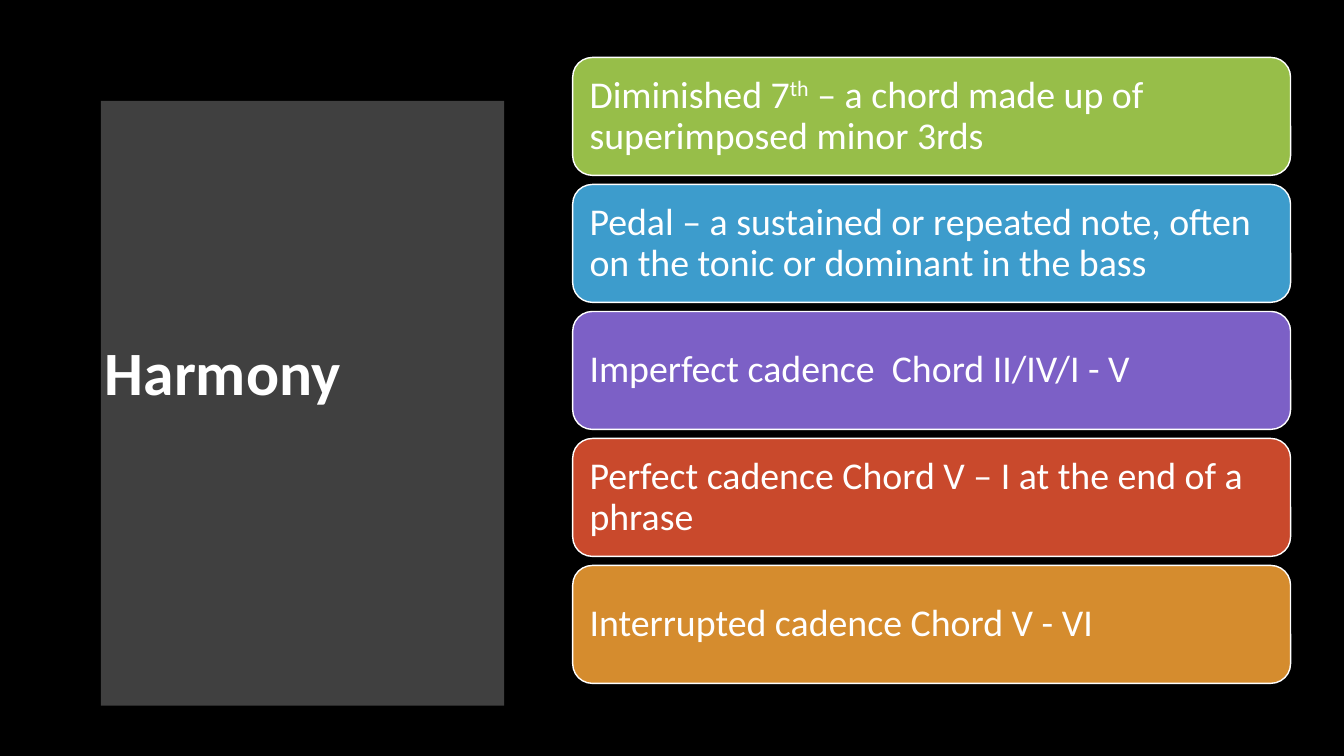
from pptx import Presentation
from pptx.dml.color import RGBColor
from pptx.enum.shapes import MSO_SHAPE
from pptx.enum.text import MSO_ANCHOR, MSO_AUTO_SIZE, PP_ALIGN
from pptx.util import Inches, Pt

SLIDE_WIDTH, SLIDE_HEIGHT = 13.33, 7.5

# Card column: left edge, first row, row pitch and card size
CARD_LEFT, CARD_TOP, CARD_PITCH = 5.68, 0.57, 1.26
CARD_WIDTH, CARD_HEIGHT = 7.12, 1.17

# Panel: straight left side, right side bulging to an apex
PANEL_LEFT, PANEL_TOP, PANEL_BOTTOM = 0.53, 0.52, 6.96
PANEL_APEX_X, PANEL_APEX_Y, PANEL_BULGE = 5.32, 3.6, 0.24
CURVE_STEPS = 48

# Each term: card colour, then pieces of text; "th" marks a raised ordinal
TERMS = [
    ("97BE49", ["Diminished 7", "th", " – a chord made up of superimposed minor 3rds"]),
    ("3D9CCC", ["Pedal – a sustained or repeated note, often on the tonic "
                "or dominant in the bass"]),
    ("7C60C6", ["Imperfect cadence  Chord II/IV/I - V"]),
    ("C9492C", ["Perfect cadence Chord V – I at the end of a phrase"]),
    ("D58C2E", ["Interrupted cadence Chord V - VI"]),
]


def paint(fill, colour):
    fill.solid()
    fill.fore_color.rgb = RGBColor.from_string(colour)


def format_paragraph(paragraph, size, bold=False):
    paragraph.alignment = PP_ALIGN.LEFT
    paragraph.line_spacing = 0.9
    paragraph.font.name = "Calibri"
    paragraph.font.size = Pt(size)
    paragraph.font.bold = bold
    paint(paragraph.font.fill, "FFFFFF")


def add_panel(slide):
    def curve_point(step):
        y = PANEL_TOP + (PANEL_BOTTOM - PANEL_TOP) * step / CURVE_STEPS
        reach = (PANEL_APEX_Y - PANEL_TOP if y < PANEL_APEX_Y
                 else PANEL_BOTTOM - PANEL_APEX_Y)
        x = PANEL_APEX_X - PANEL_BULGE * ((y - PANEL_APEX_Y) / reach) ** 2
        return x, y

    outline = slide.shapes.build_freeform(PANEL_LEFT, PANEL_TOP, scale=Inches(1))
    curve = [curve_point(step) for step in range(CURVE_STEPS + 1)]
    outline.add_line_segments(curve + [(PANEL_LEFT, PANEL_BOTTOM)], close=True)
    panel = outline.convert_to_shape()
    panel.shadow.inherit = False
    paint(panel.fill, "404040")
    panel.line.fill.background()
    # The panel lies behind the heading
    slide.shapes.title.element.addprevious(panel.element)


def set_heading(slide, text):
    heading = slide.shapes.title
    heading.left, heading.top = Inches(0.94), Inches(1.11)
    heading.width, heading.height = Inches(3.74), Inches(5.24)
    frame = heading.text_frame
    frame.text = text
    frame.word_wrap = True
    frame.auto_size = MSO_AUTO_SIZE.NONE
    frame.vertical_anchor = MSO_ANCHOR.MIDDLE
    format_paragraph(frame.paragraphs[0], 44, bold=True)


def add_term_card(slide, row, colour, pieces):
    card = slide.shapes.add_shape(
        MSO_SHAPE.ROUNDED_RECTANGLE,
        Inches(CARD_LEFT), Inches(CARD_TOP + row * CARD_PITCH),
        Inches(CARD_WIDTH), Inches(CARD_HEIGHT))
    card.shadow.inherit = False
    paint(card.fill, colour)
    paint(card.line.fill, "FFFFFF")
    card.line.width = Pt(1)

    frame = card.text_frame
    frame.word_wrap = True
    frame.vertical_anchor = MSO_ANCHOR.MIDDLE
    frame.margin_left = frame.margin_right = Inches(0.11)
    frame.margin_top = frame.margin_bottom = Inches(0.11)
    definition = frame.paragraphs[0]
    format_paragraph(definition, 27)
    for piece in pieces:
        run = definition.add_run()
        run.text = piece
        if piece == "th":
            run._r.get_or_add_rPr().set("baseline", "30000")


def main():
    deck = Presentation()
    deck.slide_width, deck.slide_height = Inches(SLIDE_WIDTH), Inches(SLIDE_HEIGHT)
    slide = deck.slides.add_slide(deck.slide_layouts.get_by_name("Title Only"))
    paint(slide.background.fill, "000000")

    # Heading side
    add_panel(slide)
    set_heading(slide, "Harmony")

    # Definitions side
    for row, (colour, pieces) in enumerate(TERMS):
        add_term_card(slide, row, colour, pieces)

    deck.save("out.pptx")


if __name__ == "__main__":
    main()
